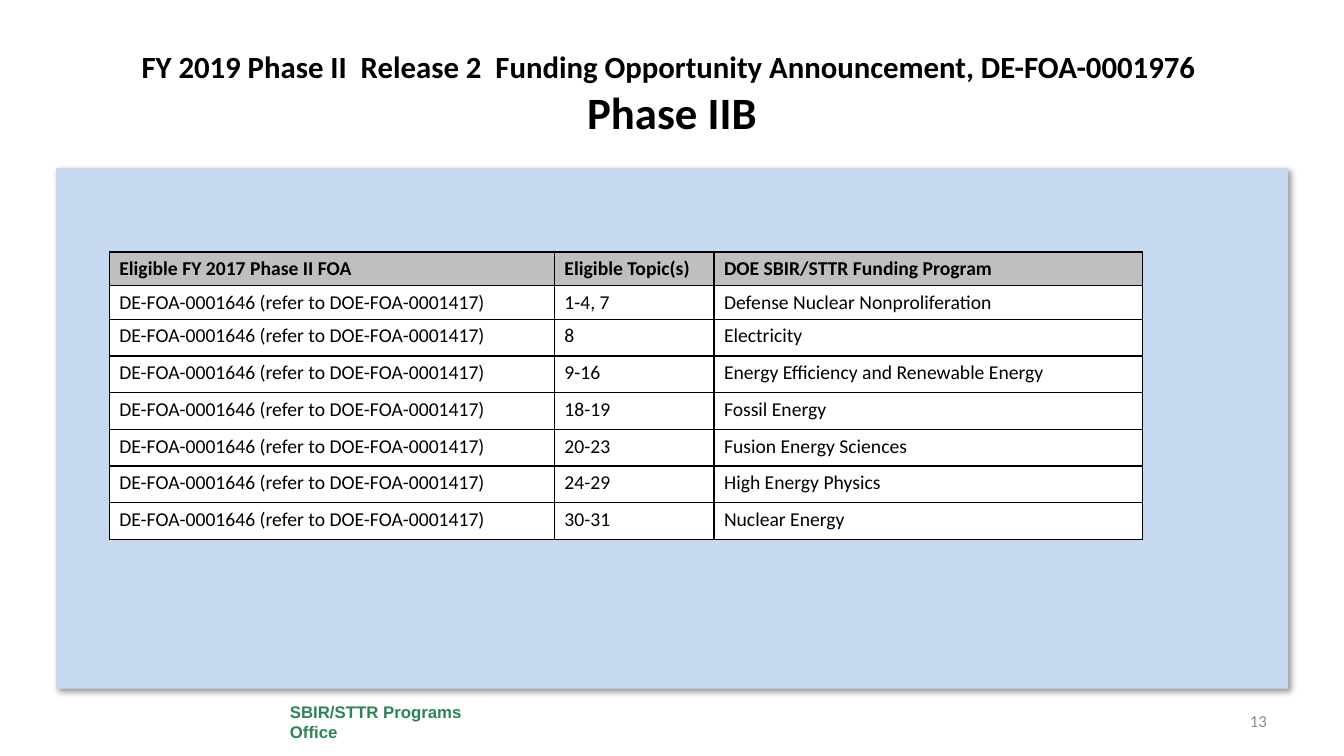
from typing import NamedTuple

from lxml import etree
from pptx import Presentation, oxml, util as u
from pptx.dml.color import RGBColor
from pptx.enum import shapes, text
from pptx.oxml import ns

COLS, ROWS = 48, 27
WIDE, HIGH = u.Inches(13.33), u.Inches(7.5)
BLACK = RGBColor(0x00, 0x00, 0x00)
WHITE = RGBColor(0xFF, 0xFF, 0xFF)
BLUE = RGBColor(0xC6, 0xD9, 0xF1)
GREEN = RGBColor(0x2C, 0x84, 0x58)
SILVER = RGBColor(0xBF, 0xBF, 0xBF)
GRAY = RGBColor(0x8C, 0x8C, 0x8C)


class Area(NamedTuple):
    """A place on the slide, in grid columns and rows."""
    col: float
    row: float
    wide: float
    high: float

    def box(self) -> tuple:
        """Return left, top, width and height as lengths."""
        return across(self.col), down(self.row), across(self.wide), down(self.high)


class Style(NamedTuple):
    """The look of a run of text."""
    size: float
    color: RGBColor = BLACK
    bold: bool = False
    font: str = "Calibri"


class Award(NamedTuple):
    """One row of the table."""
    call: str
    topics: str
    program: str


PANEL = Area(2, 6, 44, 18.6)
OFFICE = Area(10, 24.9, 7.6, 1.74)
TITLE = Area(2.4, 1.08, 43.2, 4.5)
NUMBER = Area(38, 25.02, 7.6, 1.44)
TABLE = Area(3.9, 9, 36.9, 10.2)
WIDTHS = (15.9, 5.7, 15.3)
HEAD_ROW, FIRST_ROW, BODY_ROW = 1.16, 1.2, 1.31

HEAD = Award("Eligible FY 2017 Phase II FOA", "Eligible Topic(s)",
             "DOE SBIR/STTR Funding Program")
CALL = "DE-FOA-0001646 (refer to DOE-FOA-0001417)"
AWARDS = [Award(CALL, *pair) for pair in (
    ("1-4, 7", "Defense Nuclear Nonproliferation"),
    ("8", "Electricity"),
    ("9-16", "Energy Efficiency and Renewable Energy"),
    ("18-19", "Fossil Energy"),
    ("20-23", "Fusion Energy Sciences"),
    ("24-29", "High Energy Physics"),
    ("30-31", "Nuclear Energy"),
)]


def across(cols: float) -> int:
    """Turn grid columns into a length."""
    return round(WIDE * cols / COLS)


def down(rows: float) -> int:
    """Turn grid rows into a length."""
    return round(HIGH * rows / ROWS)


def write(para, words: str, style: Style) -> None:
    """Add one styled run to a paragraph."""
    run = para.add_run()
    run.text = words
    run.font.name = style.font
    run.font.size = u.Pt(style.size)
    run.font.bold = style.bold
    run.font.color.rgb = style.color


def block(slide, area: Area, fill: RGBColor):
    """Draw a plain filled rectangle."""
    rect = slide.shapes.add_shape(shapes.MSO_SHAPE.RECTANGLE, *area.box())
    rect.shadow.inherit = False
    rect.fill.solid()
    rect.fill.fore_color.rgb = fill
    rect.line.fill.background()
    return rect


def shade(shape) -> None:
    """Give a shape a soft shadow to the lower right."""
    fx = shape.element.spPr.find(ns.qn("a:effectLst"))
    fx.append(oxml.parse_xml(
        f'<a:outerShdw {ns.nsdecls("a")} blurRad="{u.Pt(4)}" dist="{u.Pt(3)}" '
        f'dir="{45 * 60000}" algn="tl" rotWithShape="0"><a:srgbClr val="{BLACK}">'
        '<a:alpha val="40000"/></a:srgbClr></a:outerShdw>'))


def edge(cell) -> None:
    """Draw a thin black border on all sides of a cell."""
    props = cell._tc.get_or_add_tcPr()
    for spot, side in enumerate(("lnL", "lnR", "lnT", "lnB")):
        line = etree.Element(ns.qn(f"a:{side}"), w=str(u.Pt(1)))
        fill = etree.SubElement(line, ns.qn("a:solidFill"))
        etree.SubElement(fill, ns.qn("a:srgbClr"), val=str(BLACK))
        props.insert(spot, line)


def head(slide) -> None:
    """Place and write the two-line title."""
    title = slide.shapes.title
    title.left, title.top, title.width, title.height = TITLE.box()
    frame = title.text_frame
    frame.auto_size = text.MSO_AUTO_SIZE.NONE
    frame.vertical_anchor = text.MSO_ANCHOR.MIDDLE
    para = frame.paragraphs[0]
    para.alignment = text.PP_ALIGN.CENTER
    write(para, "FY 2019 Phase II  Release 2  Funding Opportunity "
          "Announcement, DE-FOA-0001976 ", Style(22, bold=True))
    para.add_line_break()
    write(para, "Phase IIB", Style(32, bold=True))


def foot(slide) -> None:
    """Write the office name and the slide number."""
    office = block(slide, OFFICE, WHITE)
    number = slide.shapes.add_textbox(*NUMBER.box())
    left, right = text.PP_ALIGN.LEFT, text.PP_ALIGN.RIGHT
    for shape, words, side, style in (
        (office, "SBIR/STTR Programs Office", left, Style(12, GREEN, True, "Arial")),
        (number, "13", right, Style(12, GRAY)),
    ):
        frame = shape.text_frame
        frame.word_wrap = True
        frame.vertical_anchor = text.MSO_ANCHOR.MIDDLE
        frame.paragraphs[0].alignment = side
        write(frame.paragraphs[0], words, style)


def chart(slide) -> None:
    """Build the table of eligible topics."""
    lines = [HEAD, *AWARDS]
    table = slide.shapes.add_table(len(lines), len(WIDTHS), *TABLE.box()).table
    table.horz_banding = False
    for col, wide in zip(table.columns, WIDTHS):
        col.width = across(wide)
    highs = [HEAD_ROW, FIRST_ROW] + [BODY_ROW] * (len(lines) - 2)
    for spot, (row, line, high) in enumerate(zip(table.rows, lines, highs)):
        row.height = down(high)
        for cell, words in zip(row.cells, line):
            cell.fill.solid()
            cell.fill.fore_color.rgb = WHITE if spot else SILVER
            edge(cell)
            write(cell.text_frame.paragraphs[0], words, Style(14, bold=spot == 0))


def main() -> None:
    """Build and save the slide."""
    deck = Presentation()
    deck.slide_width, deck.slide_height = WIDE, HIGH
    slide = deck.slides.add_slide(deck.slide_layouts[5])
    shade(block(slide, PANEL, BLUE))
    head(slide)
    foot(slide)
    chart(slide)
    deck.save("out.pptx")


if __name__ == "__main__":
    main()
